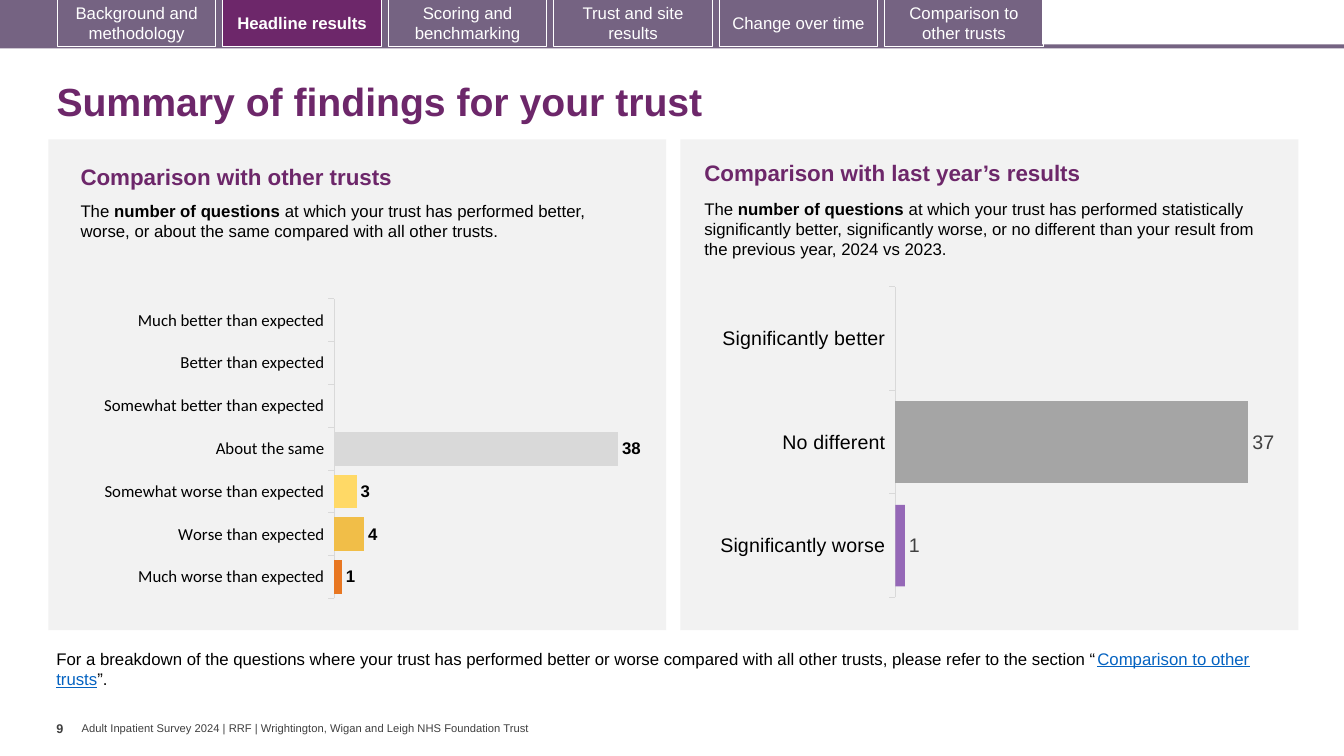
from lxml.etree import SubElement
from pptx import Presentation
from pptx.chart.data import CategoryChartData
from pptx.dml.color import RGBColor
from pptx.enum.chart import XL_CHART_TYPE, XL_LABEL_POSITION, XL_TICK_MARK
from pptx.enum.shapes import MSO_SHAPE
from pptx.enum.text import MSO_ANCHOR, MSO_AUTO_SIZE, PP_ALIGN
from pptx.oxml import parse_xml
from pptx.oxml.ns import nsdecls, qn
from pptx.util import Cm, Pt

PLUM, MAUVE, PALE, DARK, LINK = "6D276A", "756382", "F2F2F2", "404040", "0563C1"
BLACK, WHITE, AXIS = "000000", "FFFFFF", "D9D9D9"

TABS = ["Background and methodology", "Headline results", "Scoring and benchmarking",
        "Trust and site results", "Change over time", "Comparison to other trusts"]
CURRENT_TAB = "Headline results"
TITLE = "Summary of findings for your trust"
FOOTER = "Adult Inpatient Survey 2024 | RRF | Wrightington, Wigan and Leigh NHS Foundation Trust"
PAGE = "9"
NOTE = [("For a breakdown of the questions where your trust has performed better or worse "
         "compared with all other trusts, please refer to the section “", {}),
        ("Comparison to other trusts", {"color": LINK, "underline": True}),
        ("”.", {})]

# Boxes are left, top, width, height in cm; bars are label, value, colour, opacity in %.
PANELS = [
    {"left": 1.22,
     "heading": "Comparison with other trusts", "heading_box": (1.78, 3.99, 14, 0.94),
     "detail": "at which your trust has performed better, worse, or about the same "
               "compared with all other trusts.",
     "detail_box": (1.78, 4.93, 13.44, 1.8),
     "chart_box": (1.04, 6.91, 15.82, 8.66), "plot": (0.467, 0.072, 0.476, 0.872),
     "axis_font": {"size": 12, "font": "Calibri"},
     "label_font": {"size": 12, "bold": True},
     "bars": [("Much better than expected", None, "419999", 100),
              ("Better than expected", None, "5FBD83", 100),
              ("Somewhat better than expected", None, "A9D18E", 100),
              ("About the same", 38, "D9D9D9", 100),
              ("Somewhat worse than expected", 3, "FFD966", 100),
              ("Worse than expected", 4, "F1BE48", 100),
              ("Much worse than expected", 1, "E87722", 100)]},
    {"left": 17.15,
     "heading": "Comparison with last year’s results", "heading_box": (17.5, 3.89, 14, 0.94),
     "detail": "at which your trust has performed statistically significantly better, "
               "significantly worse, or no different than your result from the previous "
               "year, 2024 vs 2023.",
     "detail_box": (17.5, 4.88, 14.58, 1.8),
     "chart_box": (16.87, 6.93, 15.82, 8.61), "plot": (0.36, 0.035, 0.608, 0.909),
     "axis_font": {"size": 14},
     "label_font": {"size": 14, "color": DARK},
     "bars": [("Significantly better", None, "9DC3E6", 100),
              ("No different", 37, "A5A5A5", 100),
              ("Significantly worse", 1, "7030A0", 71)]},
]


def rgb(value):
    return RGBColor.from_string(value)


def cm(box):
    return [Cm(v) for v in box]


def style(f, size=12, color=BLACK, bold=False, underline=False, font="Arial"):
    f.name, f.size, f.bold, f.underline = font, Pt(size), bold, underline
    f.color.rgb = rgb(color)


def write(tf, text, align=PP_ALIGN.LEFT, anchor=MSO_ANCHOR.TOP, wrap=True,
          insets=None, spacing=None, **fmt):
    """Fill a frame with one paragraph; text is a string or (text, format) pairs."""
    tf.word_wrap, tf.vertical_anchor = wrap, anchor
    tf.auto_size = MSO_AUTO_SIZE.NONE
    if insets:
        tf.margin_left, tf.margin_top, tf.margin_right, tf.margin_bottom = cm(insets)
    p = tf.paragraphs[0]
    p.alignment = align
    if spacing:
        p.line_spacing = spacing
    for part, extra in [(text, {})] if isinstance(text, str) else text:
        r = p.add_run()
        r.text = part
        style(r.font, **{**fmt, **extra})


def add_text(s, box, text, **fmt):
    write(s.shapes.add_textbox(*cm(box)).text_frame, text, **fmt)


def add_rect(s, box, fill=None, line=None):
    sp = s.shapes.add_shape(MSO_SHAPE.RECTANGLE, *cm(box))
    sp.shadow.inherit = False
    if fill:
        sp.fill.solid()
        sp.fill.fore_color.rgb = rgb(fill)
    else:
        sp.fill.background()
    if line:
        sp.line.color.rgb = rgb(line)
        sp.line.width = Pt(0.75)
    else:
        sp.line.fill.background()
    return sp


def place_plot(chart, fractions):
    """Fix the inner plot area as fractions of the chart."""
    area = chart._chartSpace.chart.plotArea
    for old in area.findall(qn("c:layout")):
        area.remove(old)
    values = "".join(f'<c:{tag} val="{v}"/>' for tag, v in zip("xywh", fractions))
    area.insert(0, parse_xml(
        f'<c:layout {nsdecls("c")}><c:manualLayout><c:layoutTarget val="inner"/>'
        f'<c:xMode val="edge"/><c:yMode val="edge"/>{values}'
        '</c:manualLayout></c:layout>'))


def add_bars(s, panel):
    bars = panel["bars"]
    data = CategoryChartData()
    data.categories = [bar[0] for bar in bars]
    data.add_series("Series 1", [bar[1] for bar in bars])
    chart = s.shapes.add_chart(XL_CHART_TYPE.BAR_CLUSTERED, *cm(panel["chart_box"]),
                               data).chart
    chart.has_legend = chart.has_title = False
    style(chart.font, **panel["axis_font"])
    place_plot(chart, panel["plot"])

    cat, val = chart.category_axis, chart.value_axis
    cat.reverse_order = True
    cat.has_major_gridlines = val.has_major_gridlines = False
    cat.major_tick_mark = XL_TICK_MARK.OUTSIDE
    cat.format.line.color.rgb = rgb(AXIS)
    cat.format.line.width = Pt(0.75)
    style(cat.tick_labels.font, **panel["axis_font"])
    val.minimum_scale, val.maximum_scale, val.visible = 0, 40, False

    plot = chart.plots[0]
    plot.gap_width, plot.vary_by_categories = 27, False
    series = plot.series[0]
    series.invert_if_negative = False
    for i, (_, _, color, opacity) in enumerate(bars):
        fill = series.points[i].format.fill
        fill.solid()
        fill.fore_color.rgb = rgb(color)
        if opacity < 100:
            clr = series.points[i].format.fill._xPr.find(".//" + qn("a:srgbClr"))
            SubElement(clr, qn("a:alpha"), val=str(opacity * 1000))
    labels = series.data_labels
    labels.show_value = True
    labels.position = XL_LABEL_POSITION.OUTSIDE_END
    labels.number_format, labels.number_format_is_linked = "0", False
    style(labels.font, **panel["label_font"])


def main():
    prs = Presentation()
    prs.slide_width, prs.slide_height = Cm(33.87), Cm(19.05)
    s = prs.slides.add_slide(prs.slide_layouts[5])

    add_rect(s, (0, 1.12, 33.87, 0.1), MAUVE)
    add_rect(s, (0, 0, 26.26, 1.19), MAUVE)
    for i, tab in enumerate(TABS):
        current = tab == CURRENT_TAB
        sp = add_rect(s, (1.45 + 4.17 * i, -0.02, 3.99, 1.19),
                      PLUM if current else None, WHITE)
        write(sp.text_frame, tab, align=PP_ALIGN.CENTER, anchor=MSO_ANCHOR.MIDDLE,
              color=WHITE, bold=current)

    title = s.shapes.title
    title.left, title.top, title.width, title.height = cm((1.17, 1.7, 31.72, 1.83))
    write(title.text_frame, TITLE, anchor=MSO_ANCHOR.MIDDLE, spacing=0.9,
          size=28, color=PLUM, bold=True)

    for panel in PANELS:
        add_rect(s, (panel["left"], 3.51, 15.57, 12.37), PALE)
        add_text(s, panel["heading_box"], panel["heading"], size=16, color=PLUM, bold=True)
        add_text(s, panel["detail_box"], [("The ", {}),
                                          ("number of questions ", {"bold": True}),
                                          (panel["detail"], {})])
        add_bars(s, panel)

    add_text(s, (1.17, 16.21, 31, 1.27), NOTE)
    add_text(s, (1.42, 18.03, 0.64, 1), PAGE, wrap=False, insets=(0, 0.13, 0, 0.13),
             size=9, color=DARK, bold=True)
    add_text(s, (2.06, 18.19, 15.5, 0.33), FOOTER, anchor=MSO_ANCHOR.MIDDLE,
             insets=(0, 0, 0, 0), size=8, color=DARK)
    prs.save("out.pptx")


if __name__ == "__main__":
    main()
